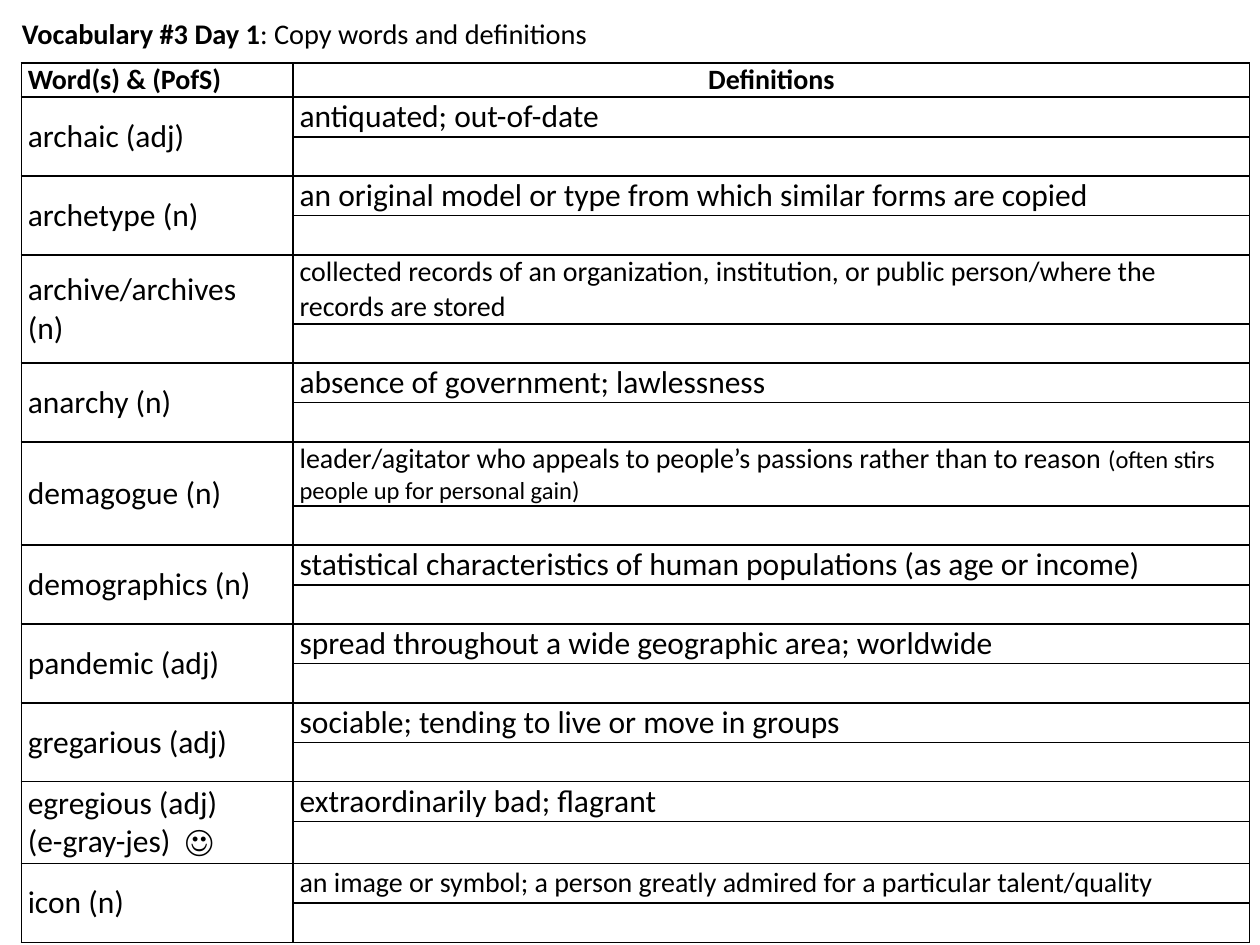
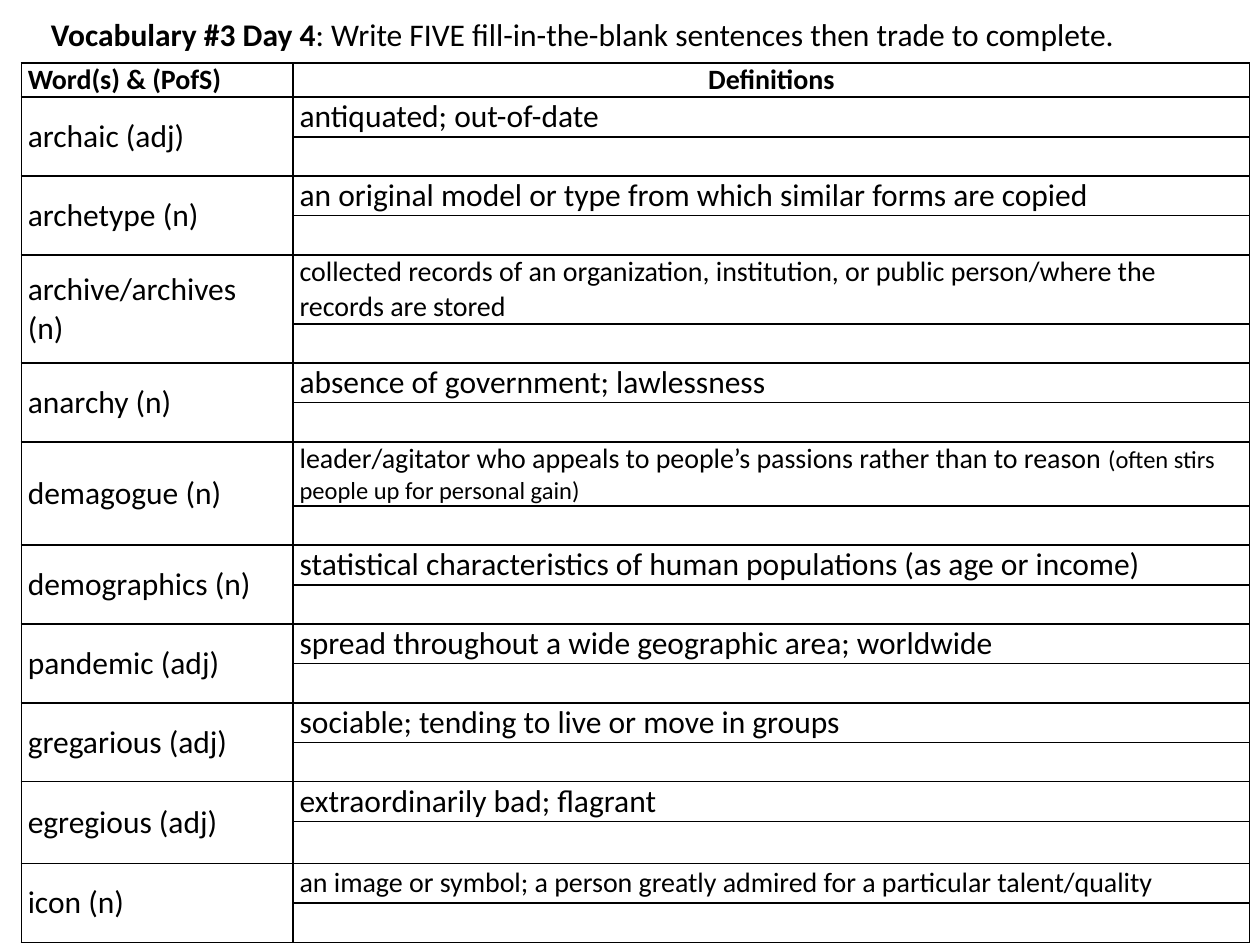
"""Build two vocabulary slides, each a title above a word table."""
from lxml import etree
from pptx import Presentation
from pptx.dml.color import RGBColor
from pptx.enum.text import MSO_ANCHOR, PP_ALIGN
from pptx.oxml.ns import qn
from pptx.util import Cm, Pt

MID = MSO_ANCHOR.MIDDLE
LEFT, CENTER = PP_ALIGN.LEFT, PP_ALIGN.CENTER

COLORS = {"ink": "000000", "paper": "FFFFFF"}
FONT = "Calibri"

DAYS = [
    {"name": "Vocabulary #3 Day 1", "task": ": Copy words and definitions",
     "size": 16.2, "width": 12.27, "hints": {"egregious (adj)": "(e-gray-jes)  ☺"}},
    {"name": "Vocabulary #3 Day 4",
     "task": ": Write FIVE fill-in-the-blank sentences then trade to complete.",
     "size": 18, "width": 23.5, "hints": {}},
]
HEADS = [("Word(s) & (PofS)", LEFT), ("Definitions", CENTER)]
WORDS = [
    (["archaic (adj)"], [("antiquated; out-of-date", 18)]),
    (["archetype (n)"],
     [("an original model or type from which similar forms are copied", 18)]),
    (["archive/archives", "(n)"],
     [("collected records of an organization, institution, or public "
       "person/where the records are stored", 16)]),
    (["anarchy (n)"], [("absence of government; lawlessness", 18)]),
    (["demagogue (n)"],
     [("leader/agitator who appeals to people’s passions rather than to reason ", 16),
      ("(often stirs people up for personal gain)", 14)]),
    (["demographics (n)"],
     [("statistical characteristics of human populations (as age or income)", 18)]),
    (["pandemic (adj)"],
     [("spread throughout a wide geographic area; worldwide", 18)]),
    (["gregarious (adj)"], [("sociable; tending to live or move in groups", 18)]),
    (["egregious (adj)"], [("extraordinarily bad; flagrant", 18)]),
    (["icon (n)"],
     [("an image or symbol; a person greatly admired for a particular talent/quality", 16)]),
]

COLS = [5.48, 19.28]
HEAD_ROW = 0.69
PAIR = (0.8, 0.79)
TALL = {"archive/archives": (1.39, 0.79), "demagogue (n)": (1.29, 0.79),
        "egregious (adj)": (0.8, 0.85)}
INSET = {"margin_left": Cm(0.13), "margin_right": Cm(0.13),
         "margin_top": 0, "margin_bottom": 0, "vertical_anchor": MID}


def apply(target, values):
    for key, value in values.items():
        setattr(target, key, value)


def write(frame, lines, align=LEFT):
    for num, runs in enumerate(lines):
        para = frame.add_paragraph() if num else frame.paragraphs[0]
        para.alignment = align
        for text, size, bold in runs:
            run = para.add_run()
            run.text = text
            apply(run.font, {"name": FONT, "size": Pt(size), "bold": bold})
            run.font.color.rgb = RGBColor.from_string(COLORS["ink"])


def style(cell):
    apply(cell, INSET)
    props = cell._tc.get_or_add_tcPr()
    for side in ("a:lnL", "a:lnR", "a:lnT", "a:lnB"):
        line = etree.SubElement(props, qn(side), w=str(Pt(1)))
        fill = etree.SubElement(line, qn("a:solidFill"))
        etree.SubElement(fill, qn("a:srgbClr"), val=COLORS["ink"])
    cell.fill.solid()
    cell.fill.fore_color.rgb = RGBColor.from_string(COLORS["paper"])


def add_title(slide, day):
    box = slide.shapes.add_textbox(0, 0, Cm(day["width"]), Cm(1.35))
    apply(box.text_frame, {"word_wrap": True, "vertical_anchor": MID})
    write(box.text_frame, [[(day["name"], day["size"], True),
                            (day["task"], day["size"], False)]], CENTER)


def add_words(slide, hints):
    rows = [HEAD_ROW]
    for word, _ in WORDS:
        rows.extend(TALL.get(word[0], PAIR))
    table = slide.shapes.add_table(
        len(rows), len(COLS), Cm(0.43), Cm(1.27), Cm(sum(COLS)), Cm(sum(rows))).table
    apply(table, {"first_row": False, "horz_banding": False})
    for col, width in zip(table.columns, COLS):
        col.width = Cm(width)
    for row, height in zip(table.rows, rows):
        row.height = Cm(height)
    for cell in table.iter_cells():
        style(cell)
    for col, (text, align) in enumerate(HEADS):
        write(table.cell(0, col).text_frame, [[(text, 16, True)]], align)
    for num, (word, sense) in enumerate(WORDS):
        top = 1 + 2 * num
        cell = table.cell(top, 0)
        cell.merge(table.cell(top + 1, 0))
        lines = word + [hints[word[0]]] if word[0] in hints else word
        write(cell.text_frame, [[(text, 18, False)] for text in lines])
        write(table.cell(top, 1).text_frame,
              [[(text, size, False) for text, size in sense]])


def main():
    deck = Presentation()
    apply(deck, {"slide_width": Cm(25.4), "slide_height": Cm(19.05)})
    for day in DAYS:
        slide = deck.slides.add_slide(deck.slide_layouts[6])
        add_title(slide, day)
        add_words(slide, day["hints"])
    deck.save("out.pptx")


if __name__ == "__main__":
    main()
